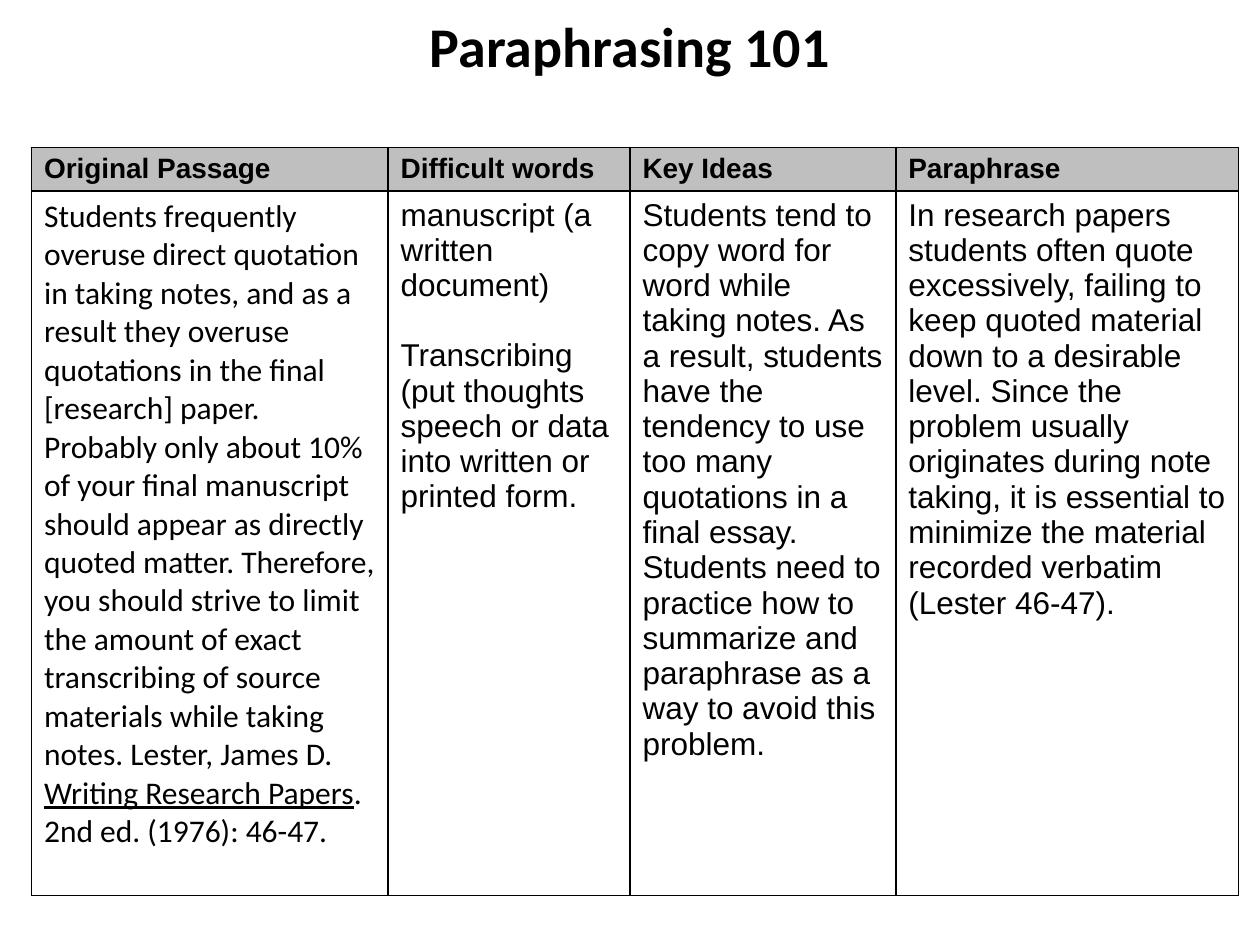
from dataclasses import dataclass

from lxml import etree
from pptx import Presentation
from pptx.dml.color import RGBColor
from pptx.enum.text import MSO_ANCHOR, PP_ALIGN
from pptx.oxml.ns import qn
from pptx.util import Inches, Pt

CENTER, LEFT = PP_ALIGN.CENTER, PP_ALIGN.LEFT
MIDDLE, TOP = MSO_ANCHOR.MIDDLE, MSO_ANCHOR.TOP
TITLE_ONLY = 5


@dataclass(frozen=True)
class Theme:
    ink: str = "000000"
    header_fill: str = "BFBFBF"
    body_fill: str = "FFFFFF"
    heading_font: str = "Calibri"
    table_font: str = "Arial"
    title_size: int = 32
    header_size: int = 16
    body_size: int = 18
    paragraph_gap: int = 20
    border: int = 1


THEME = Theme()

TITLE = "Paraphrasing 101"
COLUMN_WIDTHS = (2.83, 1.92, 2.11, 2.72)
ROW_HEIGHTS = (0.34, 5.59)
HEADERS = ("Original Passage", "Difficult words", "Key Ideas", "Paraphrase")

# Each cell is a list of paragraphs; each paragraph is a list of (text, underlined)
PASSAGE = [[
    ("Students frequently overuse direct quotation in taking notes, and as a "
     "result they overuse quotations in the final [research] paper. Probably "
     "only about 10% of your final manuscript should appear as directly quoted "
     "matter. Therefore, you should strive to limit the amount of exact "
     "transcribing of source materials while taking notes. Lester, James D. ", False),
    ("Writing Research Papers", True),
    (". 2nd ed. (1976): 46-47.", False),
]]
DIFFICULT_WORDS = [
    [("manuscript (a written document)", False)],
    [("Transcribing (put thoughts speech or data into written or printed form.", False)],
]
KEY_IDEAS = [[
    ("Students tend to copy word for word while taking notes. As a result, "
     "students have the tendency to use too many quotations in a final essay. "
     "Students need to practice how to summarize and paraphrase as a way to "
     "avoid this problem.", False),
]]
PARAPHRASE = [[
    ("In research papers students often quote excessively, failing to keep "
     "quoted material down to a desirable level. Since the problem usually "
     "originates during note taking, it is essential to minimize the material "
     "recorded verbatim (Lester 46-47).", False),
]]
BODY = (
    (PASSAGE, THEME.heading_font),
    (DIFFICULT_WORDS, THEME.table_font),
    (KEY_IDEAS, THEME.table_font),
    (PARAPHRASE, THEME.table_font),
)


def style_run(run, font, size, bold=False, underline=False):
    run.font.name = font
    run.font.size = Pt(size)
    run.font.bold = bold
    run.font.underline = underline
    run.font.color.rgb = RGBColor.from_string(THEME.ink)


def add_borders(cell):
    """Draw all four edges, placed before the fill as the schema requires."""
    properties = cell._tc.get_or_add_tcPr()
    for index, edge in enumerate(("lnL", "lnR", "lnT", "lnB")):
        line = etree.Element(qn(f"a:{edge}"), w=str(Pt(THEME.border)))
        fill = etree.SubElement(line, qn("a:solidFill"))
        etree.SubElement(fill, qn("a:srgbClr"), val=THEME.ink)
        properties.insert(index, line)


def fill_cell(cell, paragraphs, fill, font, size, bold=False):
    cell.fill.solid()
    cell.fill.fore_color.rgb = RGBColor.from_string(fill)
    cell.vertical_anchor = TOP
    add_borders(cell)
    frame = cell.text_frame
    for index, pieces in enumerate(paragraphs):
        paragraph = frame.add_paragraph() if index else frame.paragraphs[0]
        paragraph.alignment = LEFT
        if index:
            paragraph.space_before = Pt(THEME.paragraph_gap)
        for text, underline in pieces:
            run = paragraph.add_run()
            run.text = text
            style_run(run, font, size, bold, underline)


def place_title(slide, left, top, width, height):
    title = slide.shapes.title
    title.left, title.top = Inches(left), Inches(top)
    title.width, title.height = Inches(width), Inches(height)
    frame = title.text_frame
    frame.text = TITLE
    frame.vertical_anchor = MIDDLE
    frame.paragraphs[0].alignment = CENTER
    style_run(frame.paragraphs[0].runs[0], THEME.heading_font, THEME.title_size, bold=True)


def place_passage_table(slide, left, top, width, height):
    table = slide.shapes.add_table(
        len(ROW_HEIGHTS), len(COLUMN_WIDTHS),
        Inches(left), Inches(top), Inches(width), Inches(height)).table
    table.horz_banding = False
    for column, share in zip(table.columns, COLUMN_WIDTHS):
        column.width = Inches(width * share / sum(COLUMN_WIDTHS))
    for row, share in zip(table.rows, ROW_HEIGHTS):
        row.height = Inches(height * share / sum(ROW_HEIGHTS))

    for column, (header, (paragraphs, font)) in enumerate(zip(HEADERS, BODY)):
        fill_cell(table.cell(0, column), [[(header, False)]], THEME.header_fill,
                  THEME.table_font, THEME.header_size, bold=True)
        fill_cell(table.cell(1, column), paragraphs, THEME.body_fill,
                  font, THEME.body_size)


def main():
    deck = Presentation()
    deck.slide_width, deck.slide_height = Inches(10), Inches(7.5)
    slide = deck.slides.add_slide(deck.slide_layouts[TITLE_ONLY])
    place_title(slide, 0.75, 0.05, 8.5, 0.61)
    place_passage_table(slide, 0.25, 1.17, sum(COLUMN_WIDTHS), sum(ROW_HEIGHTS))
    deck.save("out.pptx")


if __name__ == "__main__":
    main()
